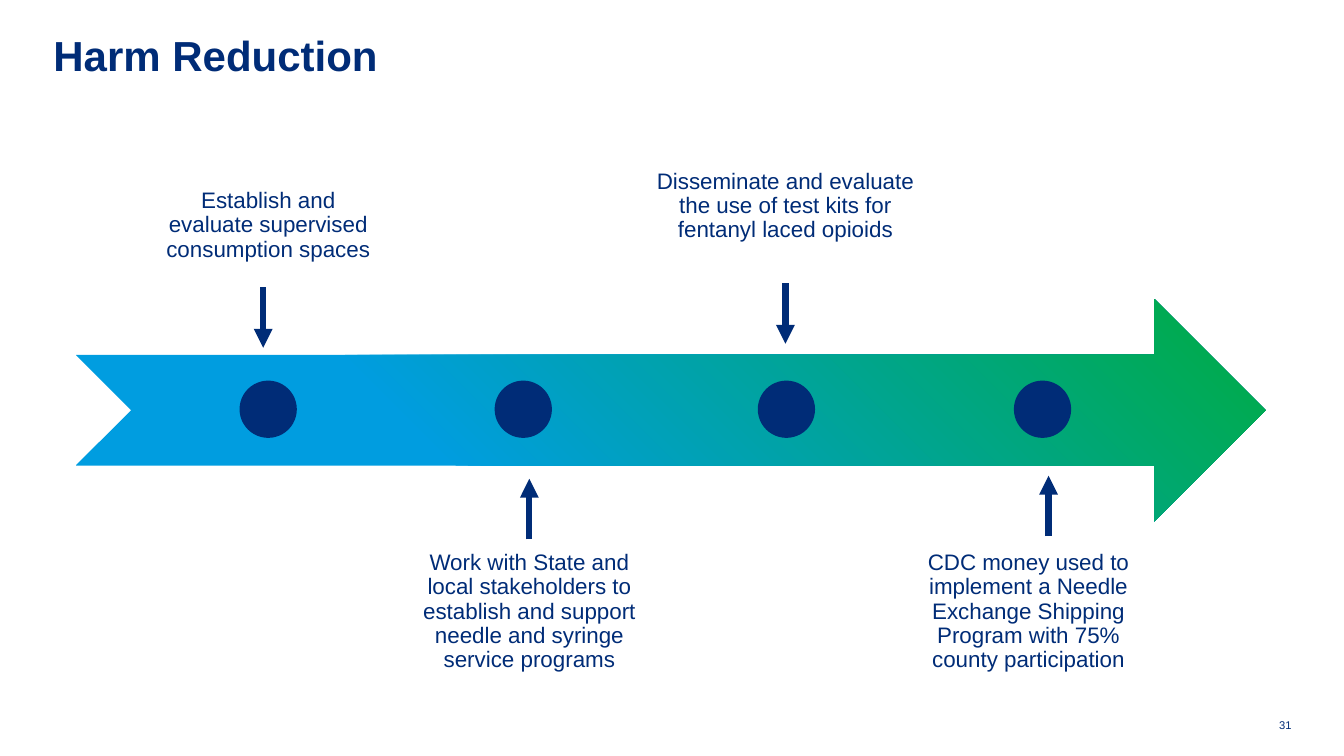
from lxml import etree
from pptx import Presentation
from pptx.dml.color import RGBColor
from pptx.enum.shapes import MSO_CONNECTOR as CONNECTOR, MSO_SHAPE as SHAPE
from pptx.enum.text import PP_ALIGN as ALIGN
from pptx.oxml.ns import qn
from pptx.util import Inches, Pt

COLORS = {"navy": "002C77", "blue": "009DE0", "green": "00AC41"}


def color(name):
    return RGBColor.from_string(COLORS[name])


class TimelineSlide:
    font = "Arial"
    ink = "navy"

    def __init__(self, prs):
        self.shapes = prs.slides.add_slide(prs.slide_layouts[6]).shapes

    def text(self, box, words, size, bold=False, align=ALIGN.LEFT, spacing=1.0, inset=0):
        frame = self.shapes.add_textbox(*map(Inches, box)).text_frame
        frame.word_wrap = True
        frame.margin_left = frame.margin_right = Inches(inset)
        frame.margin_top = frame.margin_bottom = Inches(inset)
        frame.text = words
        paragraph = frame.paragraphs[0]
        paragraph.alignment = align
        paragraph.line_spacing = spacing
        font = paragraph.runs[0].font
        font.name, font.size, font.bold = self.font, Pt(size), bold
        font.color.rgb = color(self.ink)

    def band(self, box):
        band = self.shapes.add_shape(SHAPE.NOTCHED_RIGHT_ARROW, *map(Inches, box))
        band.shadow.inherit = False
        band.line.fill.background()
        band.fill.gradient()
        band.fill.gradient_angle = 45
        for stop, (position, name) in zip(band.fill.gradient_stops, [(0.3, "blue"), (1, "green")]):
            stop.position = position
            stop.color.rgb = color(name)

    def dot(self, left, top, size):
        dot = self.shapes.add_shape(SHAPE.OVAL, *map(Inches, (left, top, size, size)))
        dot.shadow.inherit = False
        dot.fill.solid()
        dot.fill.fore_color.rgb = color(self.ink)
        dot.line.color.rgb = color(self.ink)
        dot.line.width = Pt(2)

    def arrow(self, x, start, end):
        arrow = self.shapes.add_connector(CONNECTOR.STRAIGHT, *map(Inches, (x, start, x, end)))
        arrow.line.color.rgb = color(self.ink)
        arrow.line.width = Pt(4.5)
        etree.SubElement(arrow.line._get_or_add_ln(), qn("a:tailEnd"), type="triangle")
        etree.SubElement(arrow._element.spPr, qn("a:effectLst"))


def main():
    prs = Presentation()
    prs.slide_width, prs.slide_height = Inches(13.33), Inches(7.5)
    slide = TimelineSlide(prs)

    # Title and page number
    slide.text((0.53, 0.39, 12.27, 0.54), "Harm Reduction", 30, bold=True, spacing=0.8)
    slide.text((12.5, 7.13, 0.31, 0.13), "31", 8, align=ALIGN.RIGHT)

    # Timeline band
    slide.band((0.75, 2.97, 11.8, 2.2))

    # Milestones: dot left, label box, label, arrow x, arrow start, arrow direction
    arrow_length = 0.6
    milestones = [
        (2.39, (1.45, 1.75, 2.42, 0.96),
         "Establish and evaluate supervised consumption spaces", 2.61, 2.85, 1),
        (4.92, (4.04, 5.34, 2.42, 2.16),
         "Work with State and local stakeholders to establish and support "
         "needle and syringe service programs", 5.25, 5.35, -1),
        (7.53, (6.31, 1.56, 2.96, 1.49),
         "Disseminate and evaluate the use of test kits for fentanyl laced opioids",
         7.79, 2.81, 1),
        (10.07, (8.99, 5.34, 2.42, 2.16),
         "CDC money used to implement a Needle Exchange Shipping Program "
         "with 75% county participation", 10.4, 5.32, -1),
    ]
    for dot_left, label_box, label, arrow_x, start, direction in milestones:
        slide.dot(dot_left, 3.79, 0.54)
        slide.text(label_box, label, 16, align=ALIGN.CENTER, spacing=0.9, inset=0.13)
        slide.arrow(arrow_x, start, start + direction * arrow_length)

    prs.save("out.pptx")


if __name__ == "__main__":
    main()
